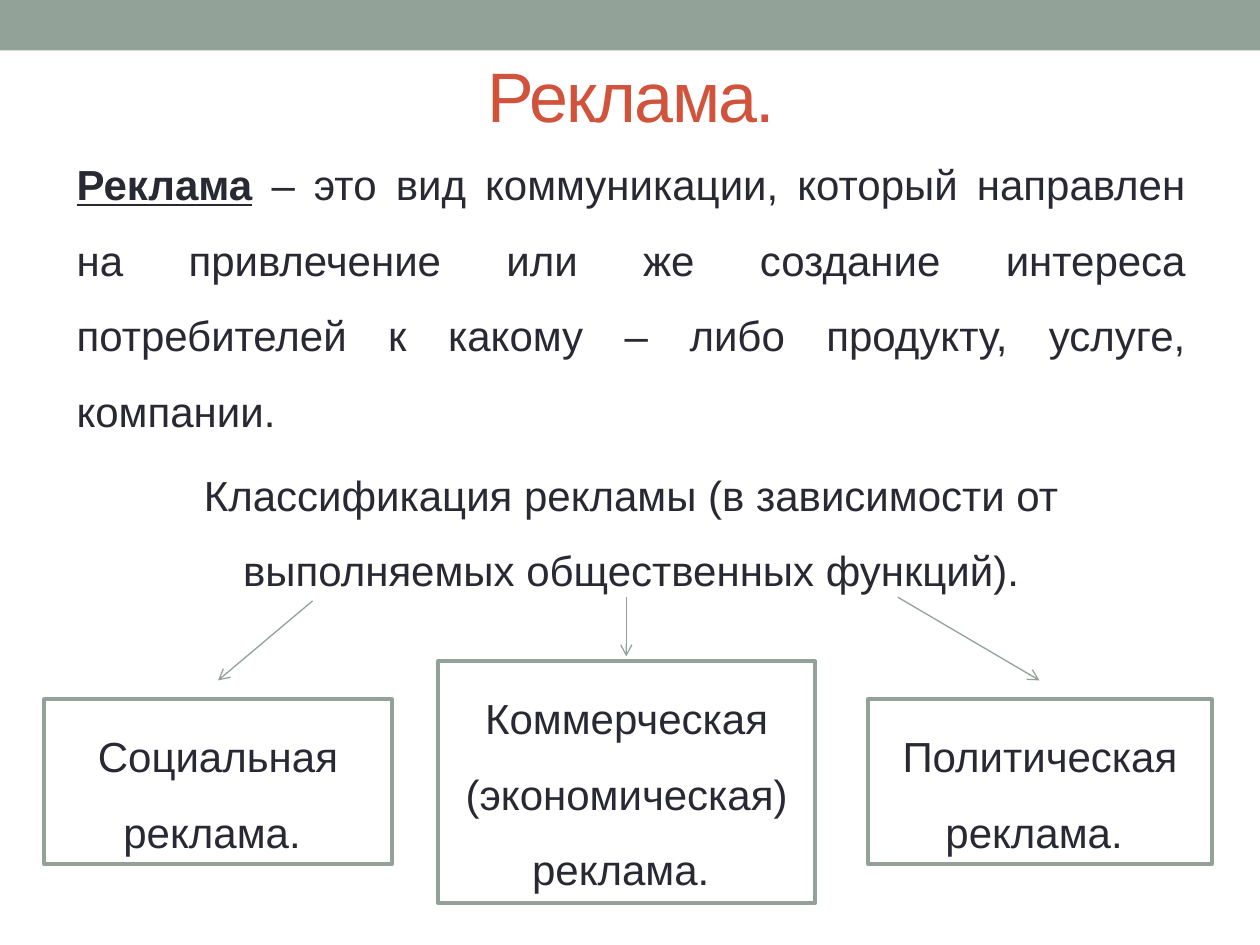
import pptx
import pptx.util
import pptx.dml.color
import pptx.enum.shapes
import pptx.enum.text
import pptx.oxml.ns
from dataclasses import dataclass
from lxml import etree

Pt = pptx.util.Pt
RGB = pptx.dml.color.RGBColor
ALIGN = pptx.enum.text.PP_ALIGN
ANCHOR = pptx.enum.text.MSO_ANCHOR


@dataclass(frozen=True)
class Theme:
    font: str = "Arial"
    title_size: float = 40
    body_size: float = 24
    accent: RGB = RGB(0x93, 0xA2, 0x99)
    title: RGB = RGB(0xD2, 0x53, 0x3C)
    ink: RGB = RGB(0x29, 0x29, 0x34)
    paper: RGB = RGB(0xFF, 0xFF, 0xFF)
    border: float = 2.08
    arrow: float = 0.75
    line_spacing: float = 1.5
    space_before: float = 4.8


class SlideBuilder:
    """Draws styled elements on one slide; all lengths are in points."""

    def __init__(self, slide, theme):
        self.slide = slide
        self.theme = theme

    def format_runs(self, paragraph, size, color):
        for run in paragraph.runs:
            run.font.name = self.theme.font
            run.font.size = Pt(size)
            run.font.color.rgb = color

    def body_paragraph(self, paragraph, align, space_before=0):
        paragraph.alignment = align
        paragraph.line_spacing = self.theme.line_spacing
        paragraph.space_before = Pt(space_before)
        self.format_runs(paragraph, self.theme.body_size, self.theme.ink)

    def rectangle(self, left, top, width, height, fill):
        rectangle = self.slide.shapes.add_shape(
            pptx.enum.shapes.MSO_SHAPE.RECTANGLE,
            Pt(left), Pt(top), Pt(width), Pt(height))
        rectangle.shadow.inherit = False
        rectangle.fill.solid()
        rectangle.fill.fore_color.rgb = fill
        return rectangle

    def band(self, width, height):
        band = self.rectangle(0, 0, width, height, self.theme.accent)
        band.line.fill.background()
        # Send the band behind the title
        self.slide.shapes._spTree.insert(2, band._element)

    def title(self, text, left, top, width, height):
        title = self.slide.shapes.title
        title.left, title.top = Pt(left), Pt(top)
        title.width, title.height = Pt(width), Pt(height)
        frame = title.text_frame
        frame.text = text
        frame.vertical_anchor = ANCHOR.MIDDLE
        heading = frame.paragraphs[0]
        heading.alignment = ALIGN.CENTER
        self.format_runs(heading, self.theme.title_size, self.theme.title)
        for run in heading.runs:
            run.font._element.set("spc", "-100")

    def definition(self, term, meaning, caption, left, top, width, height):
        frame = self.slide.shapes.add_textbox(
            Pt(left), Pt(top), Pt(width), Pt(height)).text_frame
        frame.word_wrap = True
        statement = frame.paragraphs[0]
        term_run = statement.add_run()
        term_run.text = term
        term_run.font.bold = term_run.font.underline = True
        statement.add_run().text = meaning
        lead_in = frame.add_paragraph()
        lead_in.text = caption
        self.body_paragraph(statement, ALIGN.JUSTIFY, self.theme.space_before)
        self.body_paragraph(lead_in, ALIGN.CENTER, self.theme.space_before)

    def box(self, text, left, top, width, height):
        box = self.rectangle(left, top, width, height, self.theme.paper)
        box.line.color.rgb = self.theme.accent
        box.line.width = Pt(self.theme.border)
        frame = box.text_frame
        frame.word_wrap = True
        frame.vertical_anchor = ANCHOR.TOP
        frame.text = text
        self.body_paragraph(frame.paragraphs[0], ALIGN.CENTER)

    def arrow(self, start, end):
        arrow = self.slide.shapes.add_connector(
            pptx.enum.shapes.MSO_CONNECTOR.STRAIGHT,
            *(Pt(value) for value in (*start, *end)))
        arrow.line.color.rgb = self.theme.accent
        arrow.line.width = Pt(self.theme.arrow)
        qn = pptx.oxml.ns.qn
        etree.SubElement(arrow.line._get_or_add_ln(), qn("a:tailEnd"), type="arrow")
        etree.SubElement(arrow._element.spPr, qn("a:effectLst"))


def main():
    deck = pptx.Presentation()
    deck.slide_width, deck.slide_height = Pt(720), Pt(540)
    builder = SlideBuilder(deck.slides.add_slide(deck.slide_layouts[5]), Theme())

    # Header
    builder.band(720, 28.8)
    builder.title("Реклама.", 36.7, 15.1, 648, 77.8)

    # Definition and lead-in to the classification
    builder.definition(
        "Реклама",
        " – это вид коммуникации, который направлен на привлечение или же "
        "создание интереса потребителей к какому – либо продукту, услуге, компании. ",
        "Классификация рекламы (в зависимости от выполняемых общественных функций).",
        36.7, 72.7, 648, 383.8)

    # Kinds of advertising: text, box, arrow start and end
    kinds = [
        ("Социальная реклама. ", (25.2, 399.6, 198.7, 94.3),
         (178.6, 343.4), (124.6, 388.8)),
        ("Коммерческая (экономическая) реклама. ", (250.3, 377.9, 215.6, 138.2),
         (357.9, 341.3), (357.9, 375.1)),
        ("Политическая реклама. ", (496, 399.6, 196.6, 94.3),
         (513.1, 341.3), (594, 388.8)),
    ]
    for text, frame, start, end in kinds:
        builder.box(text, *frame)
        builder.arrow(start, end)

    deck.save("out.pptx")


if __name__ == "__main__":
    main()
